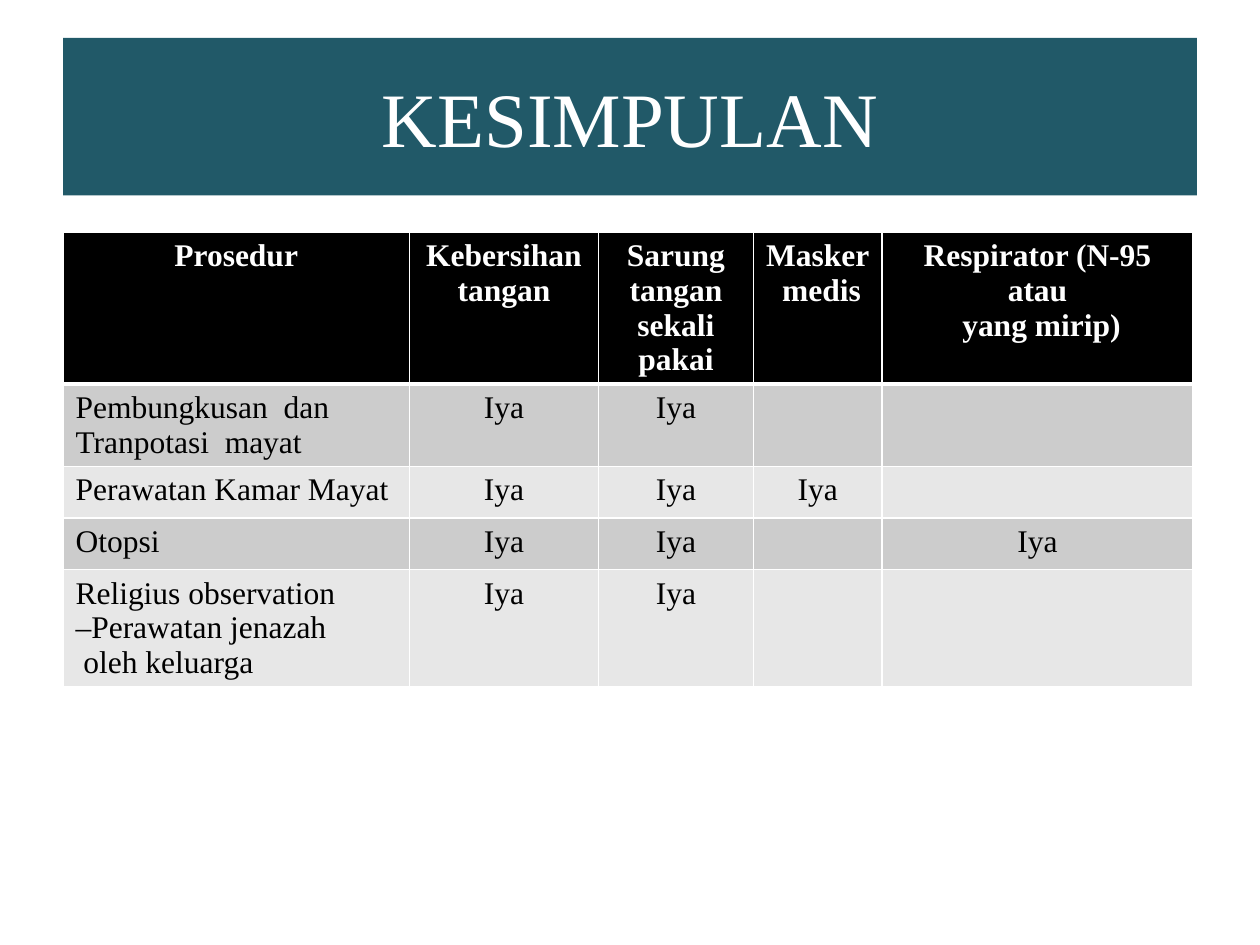
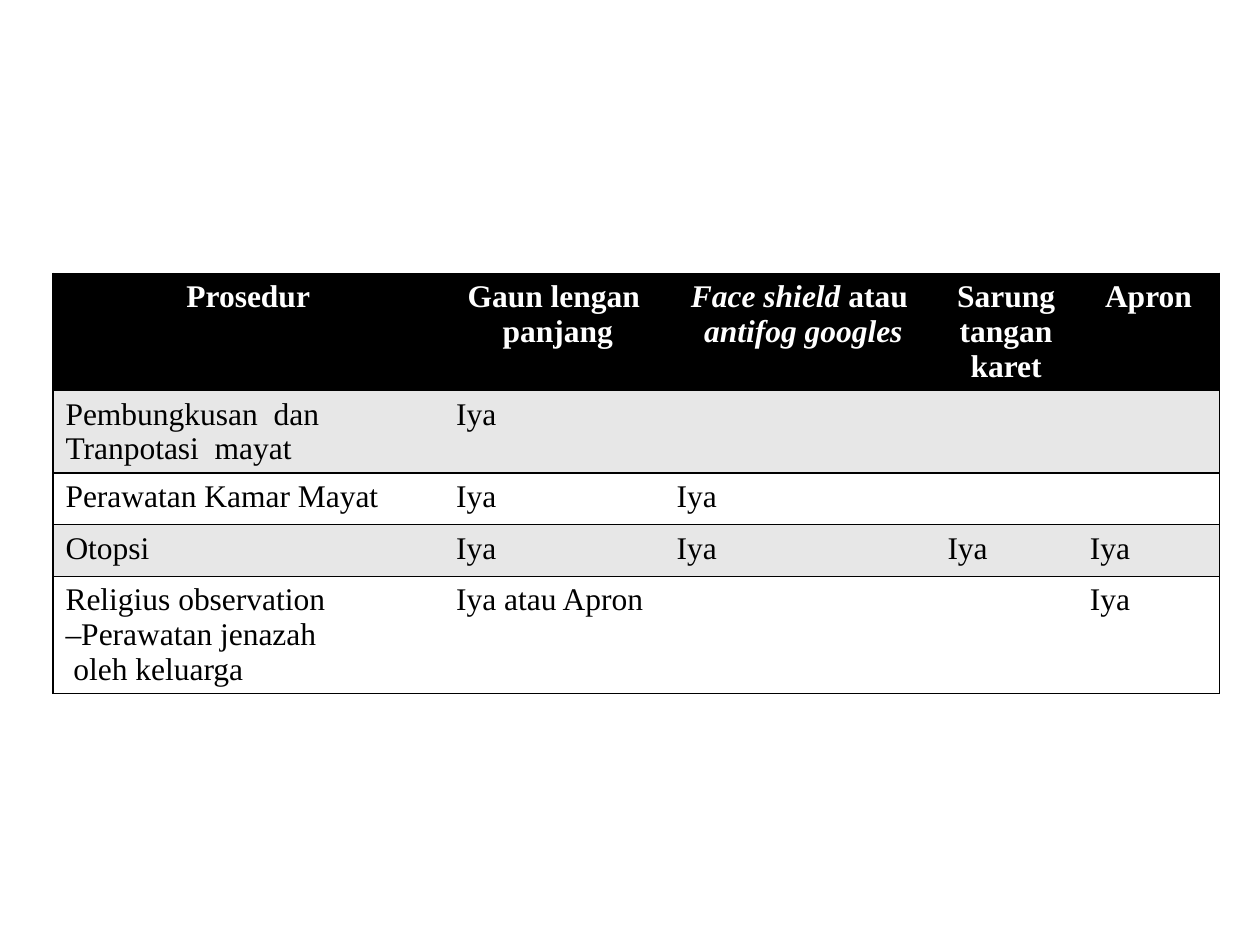
from pptx import Presentation
from pptx.dml.color import RGBColor
from pptx.enum import text
from pptx.oxml import parse_xml
from pptx.oxml.ns import nsdecls
from pptx.util import Inches, Pt

FONT = "Times New Roman"
TEAL, BLACK, WHITE = "215968", "000000", "FFFFFF"
DARK, LIGHT = "CCCCCC", "E7E7E7"
LEFT, CENTER = text.PP_ALIGN.LEFT, text.PP_ALIGN.CENTER
STEPS = [
    "Pembungkusan  dan\nTranpotasi  mayat",
    "Perawatan Kamar Mayat",
    "Otopsi",
    "Religius observation\n–Perawatan jenazah\n oleh keluarga",
]
STEP_ROWS = [0.65, 0.41, 0.41, 0.93]


def paint(fill, color):
    fill.solid()
    fill.fore_color.rgb = RGBColor.from_string(color)


def style(font, size, color, bold=False):
    font.name, font.size, font.bold = FONT, Pt(size), bold
    font.color.rgb = RGBColor.from_string(color)


def write(cell, words, color, bold, align):
    """Fill a cell; each line is a paragraph and *stars* enclose italics."""
    frame = cell.text_frame
    for i, line in enumerate(words.split("\n")):
        par = frame.add_paragraph() if i else frame.paragraphs[0]
        par.alignment = align
        for j, part in enumerate(line.split("*")):
            if part:
                run = par.add_run()
                run.text = part
                style(run.font, 18, color, bold)
                if j % 2:
                    run.font.italic = True


def edge(cell, widths, color):
    """Draw borders of the given point widths (L, R, T, B); 0 hides one."""
    props = cell._tc.get_or_add_tcPr()
    for i, (side, width) in enumerate(zip("LRTB", widths)):
        ink = (f'<a:solidFill><a:srgbClr val="{color}"/></a:solidFill>'
               if width else "<a:noFill/>")
        props.insert(i, parse_xml(
            f'<a:ln{side} {nsdecls("a")} w="{Pt(width)}">{ink}</a:ln{side}>'))


def add_title(slide, words, x, y, w, h):
    title = slide.shapes.title
    title.left, title.top, title.width, title.height = map(Inches, (x, y, w, h))
    paint(title.fill, TEAL)
    frame = title.text_frame
    frame.text = words
    frame.vertical_anchor = text.MSO_ANCHOR.MIDDLE
    par = frame.paragraphs[0]
    par.alignment = CENTER
    style(par.runs[0].font, 44, WHITE)


def add_grid(slide, x, y, cols, head_h, heads, marks, bands, align, borders, line):
    """Place a table of procedures against protective gear."""
    rows = [["Prosedur"] + heads]
    rows += [[step] + mark for step, mark in zip(STEPS, marks)]
    heights = [head_h] + STEP_ROWS
    table = slide.shapes.add_table(
        len(rows), len(cols), Inches(x), Inches(y),
        Inches(sum(cols)), Inches(sum(heights))).table
    for col, width in zip(table.columns, cols):
        col.width = Inches(width)
    for r, row in enumerate(rows):
        table.rows[r].height = Inches(heights[r])
        head = r == 0
        for c, words in enumerate(row):
            cell = table.cell(r, c)
            paint(cell.fill, BLACK if head else bands[(r - 1) % 2])
            place = CENTER if head else align if c else LEFT
            write(cell, words, WHITE if head else BLACK, head, place)
            edge(cell, borders(r, c, len(cols) - 1), line)


def all_lines(r, c, last):
    """White grid with a heavy rule under the header."""
    return 1, 1, 3 if r == 1 else 1, 3 if r == 0 else 1


def row_lines(r, c, last):
    """Rules between rows, and verticals only at the outer sides."""
    return int(c == 0), int(c == last), 1, 1


def add_basic(deck):
    slide = deck.slides.add_slide(deck.slide_layouts[5])
    add_title(slide, "KESIMPULAN", 0.5, 0.3, 9, 1.25)
    add_grid(
        slide, 0.5, 1.84, [2.75, 1.5, 1.23, 1.02, 2.47], 1.2,
        ["Kebersihan\ntangan", "Sarung tangan sekali pakai",
         "Masker\n medis", "Respirator (N-95 atau\n yang mirip)"],
        [["Iya", "Iya", "", ""],
         ["Iya", "Iya", "Iya", ""],
         ["Iya", "Iya", "", "Iya"],
         ["Iya", "Iya", "", ""]],
        [DARK, LIGHT], CENTER, all_lines, WHITE)


def add_extra(deck):
    slide = deck.slides.add_slide(deck.slide_layouts[6])
    add_grid(
        slide, 0.42, 2.17, [3.1, 1.75, 2.15, 1.13, 1.13], 0.93,
        ["Gaun lengan\n panjang", "*Face shield *atau\n* antifog googles*",
         "Sarung tangan karet", "Apron"],
        [["Iya", "", "", ""],
         ["Iya", "Iya", "", ""],
         ["Iya", "Iya", "Iya", "Iya"],
         ["Iya atau Apron", "", "", "Iya"]],
        [LIGHT, WHITE], LEFT, row_lines, BLACK)


def main():
    deck = Presentation()
    deck.slide_width, deck.slide_height = Inches(10), Inches(7.5)
    add_basic(deck)
    add_extra(deck)
    deck.save("out.pptx")


if __name__ == "__main__":
    main()
